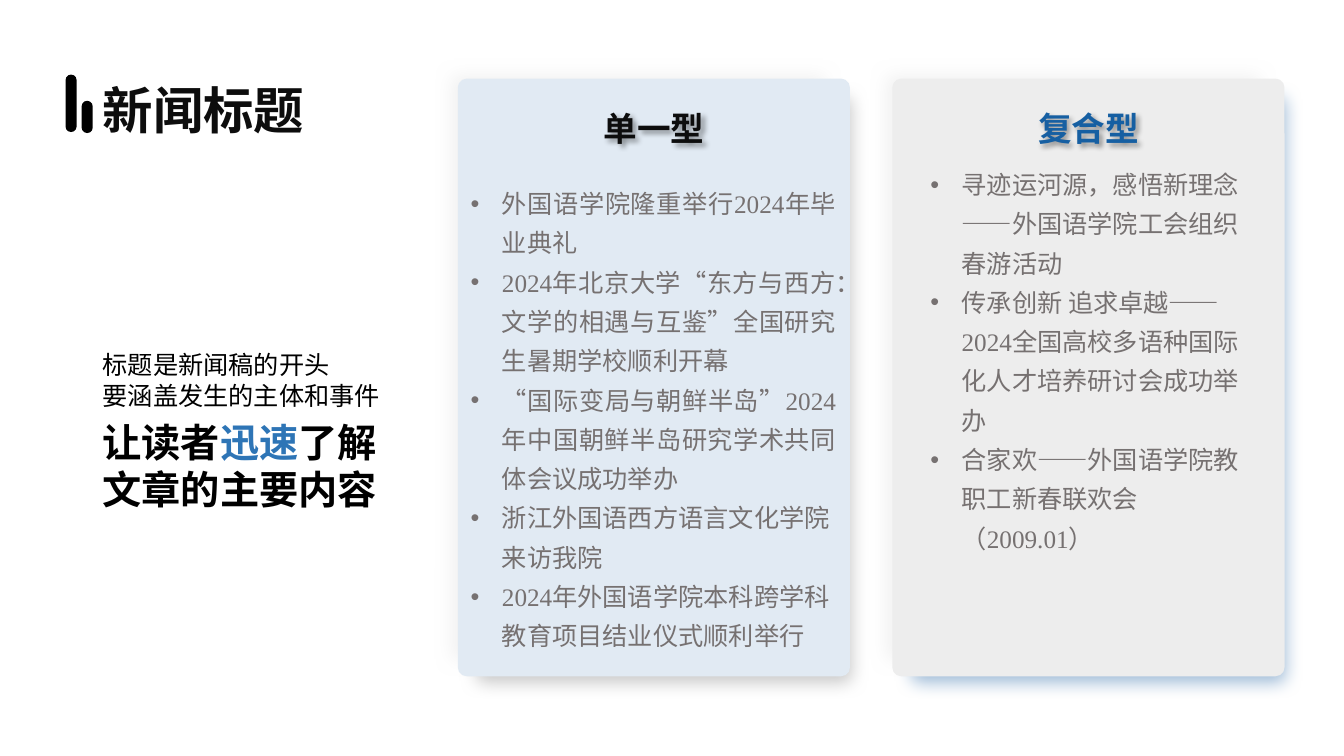
import dataclasses
from typing import Optional

import lxml.etree
import pptx
import pptx.dml.color
import pptx.enum.lang
import pptx.enum.shapes
import pptx.enum.text
import pptx.oxml.ns
import pptx.util

Inches = pptx.util.Inches
Align = pptx.enum.text.PP_ALIGN
Anchor = pptx.enum.text.MSO_ANCHOR
AutoSize = pptx.enum.text.MSO_AUTO_SIZE
qn = pptx.oxml.ns.qn


@dataclasses.dataclass(frozen=True)
class Theme:
    font: str = "Times New Roman"
    black: str = "000000"
    ink: str = "0D0D0D"
    grey: str = "767171"
    accent: str = "2E75B6"
    navy: str = "165FA2"
    glow: str = "F2F2F2"
    title: float = 36
    claim: float = 28
    heading: float = 24
    body: float = 18


THEME = Theme()


@dataclasses.dataclass(frozen=True)
class Box:
    left: float
    top: float
    width: float
    height: float


@dataclasses.dataclass(frozen=True)
class Run:
    text: str
    size: float
    color: str
    bold: bool = False


@dataclasses.dataclass(frozen=True)
class Para:
    runs: tuple[Run, ...]
    align: Optional[Align] = None
    spacing: Optional[float] = None
    after: float = 0
    bullet: bool = False


@dataclasses.dataclass(frozen=True)
class Card:
    heading: str
    heading_color: str
    fill: str
    shade: str
    body: Box
    items: tuple[str, ...]
    justified: int = 0


CARDS = (
    Card("单一型", THEME.ink, "E1EAF3", "C9C9C9", Box(4.57, 1.73, 3.82, 4.79), (
        "外国语学院隆重举行2024年毕业典礼",
        "2024年北京大学“东方与西方：文学的相遇与互鉴”全国研究生暑期学校顺利开幕",
        "“国际变局与朝鲜半岛”2024年中国朝鲜半岛研究学术共同体会议成功举办",
        "浙江外国语西方语言文化学院来访我院",
        "2024年外国语学院本科跨学科教育项目结业仪式顺利举行",
    ), justified=3),
    Card("复合型", THEME.navy, "EDEDED", "A0BCD8", Box(9.13, 1.54, 3.34, 3.61), (
        "寻迹运河源，感悟新理念——外国语学院工会组织春游活动",
        "传承创新 追求卓越——2024全国高校多语种国际化人才培养研讨会成功举办",
        "合家欢——外国语学院教职工新春联欢会（2009.01）",
    )),
)
CARD_LEFT = 4.31
CARD_PITCH = 4.31


def add_round(shapes, box: Box, fill: str, radius: float, soft: float = 0) -> None:
    s = shapes.add_shape(
        pptx.enum.shapes.MSO_SHAPE.ROUNDED_RECTANGLE, Inches(box.left),
        Inches(box.top), Inches(box.width), Inches(box.height))
    s.adjustments[0] = radius
    s.shadow.inherit = False
    s.fill.solid()
    s.fill.fore_color.rgb = pptx.dml.color.RGBColor.from_string(fill)
    s.line.fill.background()
    if soft:
        effects = s._element.spPr.find(qn("a:effectLst"))
        lxml.etree.SubElement(effects, qn("a:softEdge"), rad=str(Inches(soft)))


def add_bullet(p) -> None:
    pr = p._p.get_or_add_pPr()
    pr.set("marL", str(Inches(0.31)))
    pr.set("indent", str(Inches(-0.31)))
    lxml.etree.SubElement(pr, qn("a:buFont"), typeface="Arial")
    lxml.etree.SubElement(pr, qn("a:buChar"), char="•")


def add_text(shapes, box: Box, paras: tuple[Para, ...], wrap: bool = True,
             anchor: Anchor = Anchor.TOP,
             auto_size: AutoSize = AutoSize.SHAPE_TO_FIT_TEXT):
    s = shapes.add_textbox(Inches(box.left), Inches(box.top),
                           Inches(box.width), Inches(box.height))
    tf = s.text_frame
    tf.word_wrap = wrap
    tf.auto_size = auto_size
    tf.vertical_anchor = anchor
    for i, para in enumerate(paras):
        p = tf.add_paragraph() if i else tf.paragraphs[0]
        if para.bullet:
            add_bullet(p)
        p.alignment = para.align
        p.line_spacing = para.spacing
        if para.after:
            p.space_after = pptx.util.Pt(para.after)
        for run in para.runs:
            r = p.add_run()
            r.text = run.text
            r.font.name = THEME.font
            r.font.size = pptx.util.Pt(run.size)
            r.font.bold = run.bold
            r.font.color.rgb = pptx.dml.color.RGBColor.from_string(run.color)
            r.font.language_id = pptx.enum.lang.MSO_LANGUAGE_ID.SIMPLIFIED_CHINESE
    return s


def add_text_shadow(s) -> None:
    effects = lxml.etree.SubElement(s._element.spPr, qn("a:effectLst"))
    shadow = lxml.etree.SubElement(
        effects, qn("a:outerShdw"), blurRad=str(pptx.util.Pt(4)),
        dist=str(pptx.util.Pt(3)), dir="2700000", algn="tl", rotWithShape="0")
    color = lxml.etree.SubElement(shadow, qn("a:srgbClr"), val=THEME.black)
    lxml.etree.SubElement(color, qn("a:alpha"), val="40000")


def add_card(shapes, card: Card, left: float) -> None:
    layers = shapes.add_group_shape().shapes
    add_round(layers, Box(left, 0.58, 4.05, 6.14), THEME.glow, 0.023, 0.17)
    add_round(layers, Box(left + 0.25, 0.8, 4.05, 6.14), card.shade, 0.023, 0.17)
    add_round(layers, Box(left + 0.23, 0.78, 3.89, 5.93), card.fill, 0.023)
    heading = Run(card.heading, THEME.heading, card.heading_color, True)
    add_text_shadow(add_text(shapes, Box(left + 1.57, 1.02, 1.21, 0.5),
                             (Para((heading,), Align.CENTER),), wrap=False))
    add_text(shapes, card.body, tuple(
        Para((Run(item, THEME.body, THEME.grey),),
             Align.JUSTIFY if i < card.justified else None, 1.3, bullet=True)
        for i, item in enumerate(card.items)))


def add_intro(shapes) -> None:
    bars = shapes.add_group_shape().shapes
    for bar in (Box(0.65, 0.74, 0.11, 0.57), Box(0.81, 1, 0.11, 0.32)):
        add_round(bars, bar, THEME.black, 0.5)
    title = Run("新闻标题", THEME.title, THEME.ink, True)
    add_text(shapes, Box(0.92, 0.4, 11.5, 1.45), (Para((title,), spacing=0.9),),
             anchor=Anchor.MIDDLE, auto_size=AutoSize.NONE)
    add_text(shapes, Box(0.92, 3.42, 4.14, 1.73), (
        Para((Run("标题是新闻稿的开头", THEME.body, THEME.black),)),
        Para((Run("要涵盖发生的主体和事件", THEME.body, THEME.black),), after=6),
        Para((Run("让读者", THEME.claim, THEME.black, True),
              Run("迅速", THEME.claim, THEME.accent, True),
              Run("了解", THEME.claim, THEME.black, True))),
        Para((Run("文章的主要内容", THEME.claim, THEME.black, True),)),
    ))


def main() -> None:
    prs = pptx.Presentation()
    prs.slide_width = Inches(13.33)
    prs.slide_height = Inches(7.5)
    shapes = prs.slides.add_slide(prs.slide_layouts[6]).shapes
    add_intro(shapes)
    for i, card in enumerate(CARDS):
        add_card(shapes, card, CARD_LEFT + i * CARD_PITCH)
    prs.save("out.pptx")


if __name__ == "__main__":
    main()
